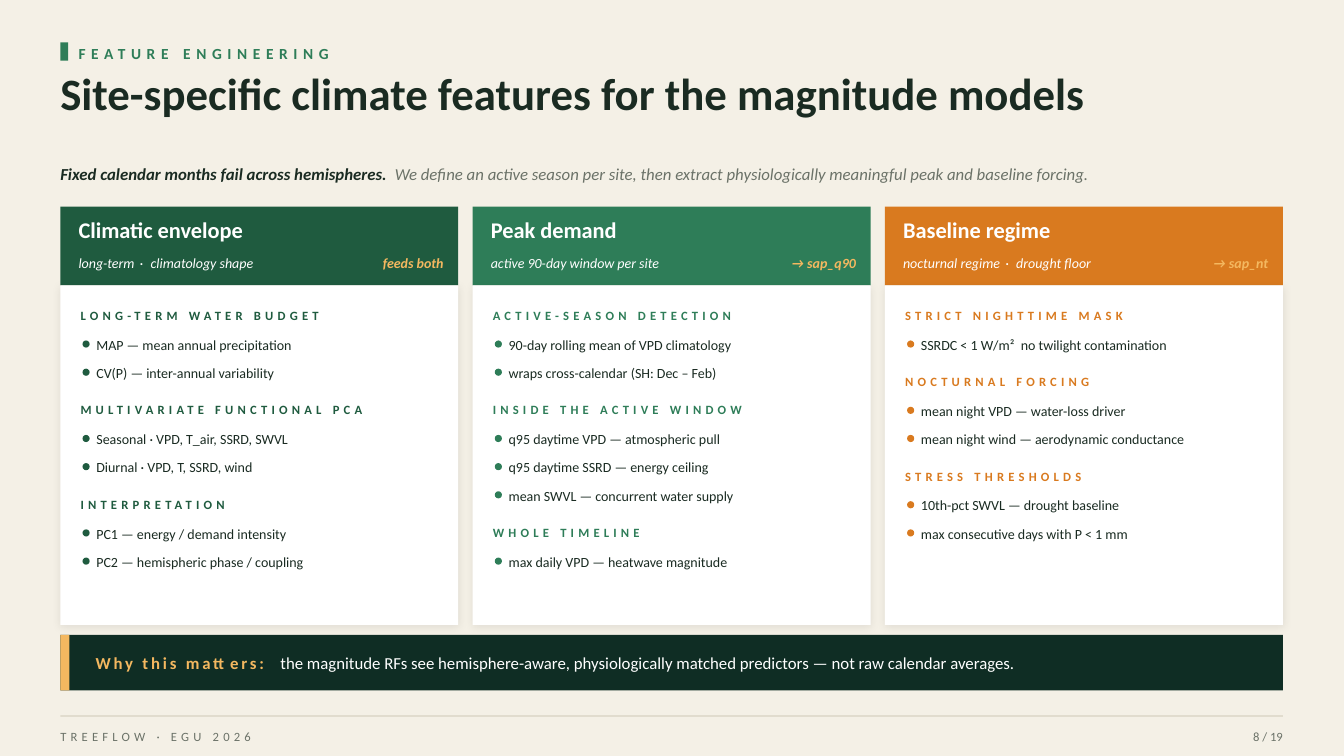
from lxml import etree
from pptx import Presentation
from pptx.dml.color import RGBColor
from pptx.enum.shapes import MSO_SHAPE as Shape
from pptx.enum.text import MSO_ANCHOR as Anchor, PP_ALIGN as Align
from pptx.oxml.ns import qn
from pptx.util import Cm, Pt

INK, GREY, WHITE = "1A2B22", "6B7268", "FFFFFF"
FOREST, GREEN, ORANGE, AMBER = "1F5B3F", "2E7D58", "D97A1F", "F4B860"
PAPER, NIGHT, SAND = "F4F0E6", "0F2D24", "D8D2C2"

LEFT, FULL_WIDTH = 1.52, 30.81
CARD_WIDTH, CARD_PITCH = 10.03, 10.39
HEADER_TOP, HEADER_HEIGHT, BODY_HEIGHT = 5.21, 1.98, 8.56
LINE_STEP, SECTION_GAP = 0.71, 0.25
BANNER_TOP, BANNER_HEIGHT = 16, 1.4

WIDE_DOT = (" · ", {"spacing": 1.5})

CARDS = [
    (FOREST, "Climatic envelope", ["long-term", WIDE_DOT, "climatology shape"], "feeds both", [
        ("LONG-TERM WATER BUDGET", [
            "MAP — mean annual precipitation",
            "CV(P) — inter-annual variability"]),
        ("MULTIVARIATE FUNCTIONAL PCA", [
            "Seasonal · VPD, T_air, SSRD, SWVL",
            "Diurnal · VPD, T, SSRD, wind"]),
        ("INTERPRETATION", [
            "PC1 — energy / demand intensity",
            "PC2 — hemispheric phase / coupling"]),
    ]),
    (GREEN, "Peak demand", ["active 90-day window per site"], "→ sap_q90", [
        ("ACTIVE-SEASON DETECTION", [
            "90-day rolling mean of VPD climatology",
            "wraps cross-calendar (SH: Dec – Feb)"]),
        ("INSIDE THE ACTIVE WINDOW", [
            "q95 daytime VPD — atmospheric pull",
            "q95 daytime SSRD — energy ceiling",
            "mean SWVL — concurrent water supply"]),
        ("WHOLE TIMELINE", ["max daily VPD — heatwave magnitude"]),
    ]),
    (ORANGE, "Baseline regime", ["nocturnal regime", WIDE_DOT, "drought floor"], "→ sap_nt", [
        ("STRICT NIGHTTIME MASK", [
            ["SSRDC < 1 W/m²", (" ", {"spacing": 2.3}), "no twilight contamination"]]),
        ("NOCTURNAL FORCING", [
            "mean night VPD — water-loss driver",
            "mean night wind — aerodynamic conductance"]),
        ("STRESS THRESHOLDS", [
            "10th-pct SWVL — drought baseline",
            "max consecutive days with P < 1 mm"]),
    ]),
]


def rgb(value):
    return RGBColor.from_string(value)


class Painter:
    font = "Calibri"

    def __init__(self, page):
        self.page = page
        page.background.fill.solid()
        page.background.fill.fore_color.rgb = rgb(PAPER)

    def shape(self, left, top, width, height, color, kind=Shape.RECTANGLE):
        item = self.page.shapes.add_shape(kind, Cm(left), Cm(top), Cm(width), Cm(height))
        item.shadow.inherit = False
        item.fill.solid()
        item.fill.fore_color.rgb = rgb(color)
        item.line.fill.background()
        return item

    def soft_shadow(self, item):
        effects = item._element.spPr.find(qn("a:effectLst"))
        shadow = etree.SubElement(effects, qn("a:outerShdw"), blurRad=str(Pt(6)),
                                  dist=str(Pt(1)), dir="5400000", rotWithShape="0")
        black = etree.SubElement(shadow, qn("a:srgbClr"), val="000000")
        etree.SubElement(black, qn("a:alpha"), val="8000")

    def text(self, left, top, width, height, content, size, color,
             align=Align.LEFT, anchor=Anchor.MIDDLE, **style):
        """Content is a string, or a list of strings and (string, style) pairs."""
        box = self.page.shapes.add_textbox(Cm(left), Cm(top), Cm(width), Cm(height))
        frame = box.text_frame
        layout = {"word_wrap": True, "vertical_anchor": anchor, "margin_left": 0,
                  "margin_right": 0, "margin_top": 0, "margin_bottom": 0}
        for name, value in layout.items():
            setattr(frame, name, value)
        para = frame.paragraphs[0]
        para.alignment = align
        for part in [content] if isinstance(content, str) else content:
            words, extra = (part, {}) if isinstance(part, str) else part
            self.span(para, words, {"size": size, "color": color, **style, **extra})

    def span(self, para, words, style):
        span = para.add_run()
        span.text = words
        values = {"name": self.font, "size": Pt(style["size"]),
                  "bold": style.get("bold", False), "italic": style.get("italic", False)}
        for name, value in values.items():
            setattr(span.font, name, value)
        span.font.color.rgb = rgb(style["color"])
        if style.get("spacing"):
            span._r.get_or_add_rPr().set("spc", str(round(style["spacing"] * 100)))

    def card(self, left, color, title, subtitle, target, sections):
        self.shape(left, HEADER_TOP, CARD_WIDTH, HEADER_HEIGHT, color)
        self.text(left + 0.46, 5.36, 9.12, 0.86, title, 16, WHITE, bold=True)
        self.text(left + 0.46, 6.22, 6.35, 0.81, subtitle, 10, WHITE, italic=True)
        self.text(left + 6.48, 6.22, 3.18, 0.81, target, 10, AMBER,
                  align=Align.RIGHT, bold=True, italic=True)
        body_top = HEADER_TOP + HEADER_HEIGHT
        self.soft_shadow(self.shape(left, body_top, CARD_WIDTH, BODY_HEIGHT, WHITE))
        top = body_top + 0.43
        for heading, facts in sections:
            self.text(left + 0.51, top, 9.02, 0.66, heading, 9, color, bold=True, spacing=3)
            top += LINE_STEP
            for fact in facts:
                self.shape(left + 0.56, top + 0.25, 0.18, 0.18, color, Shape.OVAL)
                self.text(left + 0.91, top, 8.71, 0.71, fact, 10, INK)
                top += LINE_STEP
            top += SECTION_GAP


def main():
    deck = Presentation()
    deck.slide_width, deck.slide_height = Cm(33.87), Cm(19.05)
    painter = Painter(deck.slides.add_slide(deck.slide_layouts[6]))

    painter.shape(LEFT, 1.07, 0.2, 0.46, GREEN)
    painter.text(1.98, 1.02, 15.24, 0.64, "FEATURE ENGINEERING", 11, GREEN,
                 bold=True, spacing=4)
    painter.text(LEFT, 1.65, 30.48, 2.16,
                 "Site-specific climate features for the magnitude models", 32, INK,
                 anchor=Anchor.TOP, bold=True)
    painter.text(LEFT, 3.94, FULL_WIDTH, 0.89, [
        ("Fixed calendar months fail across hemispheres.", {"color": INK, "bold": True}),
        (" ", {"spacing": 2.7}),
        "We define an active season per site, then extract physiologically "
        "meaningful peak and baseline forcing."], 12, GREY, italic=True)

    for index, card in enumerate(CARDS):
        painter.card(LEFT + index * CARD_PITCH, *card)

    painter.shape(LEFT, BANNER_TOP, FULL_WIDTH, BANNER_HEIGHT, NIGHT)
    painter.shape(LEFT, BANNER_TOP, 0.23, BANNER_HEIGHT, AMBER)
    painter.text(2.41, BANNER_TOP, 29.46, BANNER_HEIGHT, [
        ("Why this matters:", {"color": AMBER, "bold": True, "spacing": 2}),
        (" ", {"spacing": 6.7}),
        "the magnitude RFs see hemisphere-aware, physiologically matched "
        "predictors — not raw calendar averages."], 12, WHITE)

    painter.shape(LEFT, 18.03, FULL_WIDTH, 0.03, SAND)
    painter.text(LEFT, 18.24, 15.24, 0.64, "TREEFLOW · EGU 2026", 9, GREY, spacing=3)
    painter.text(28.27, 18.24, 4.06, 0.64, "8 / 19", 9, GREY, align=Align.RIGHT)

    deck.save("out.pptx")


if __name__ == "__main__":
    main()
